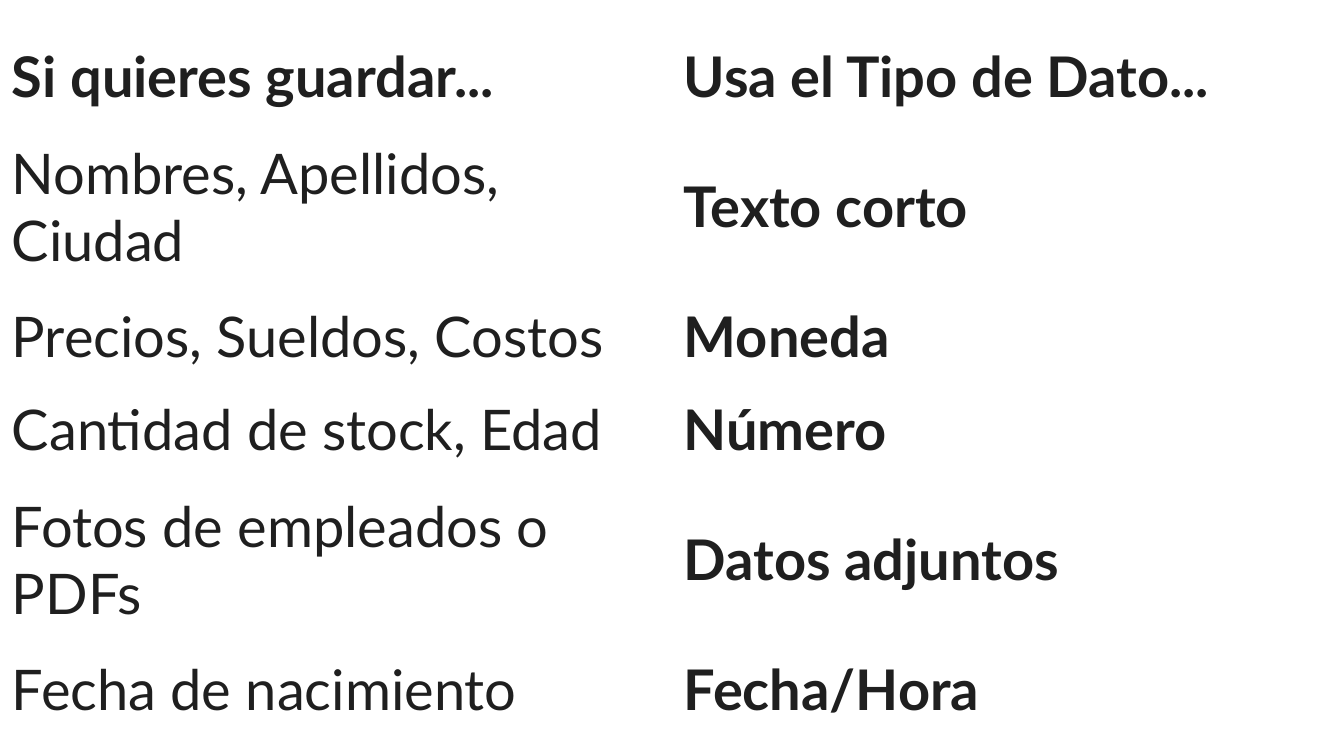
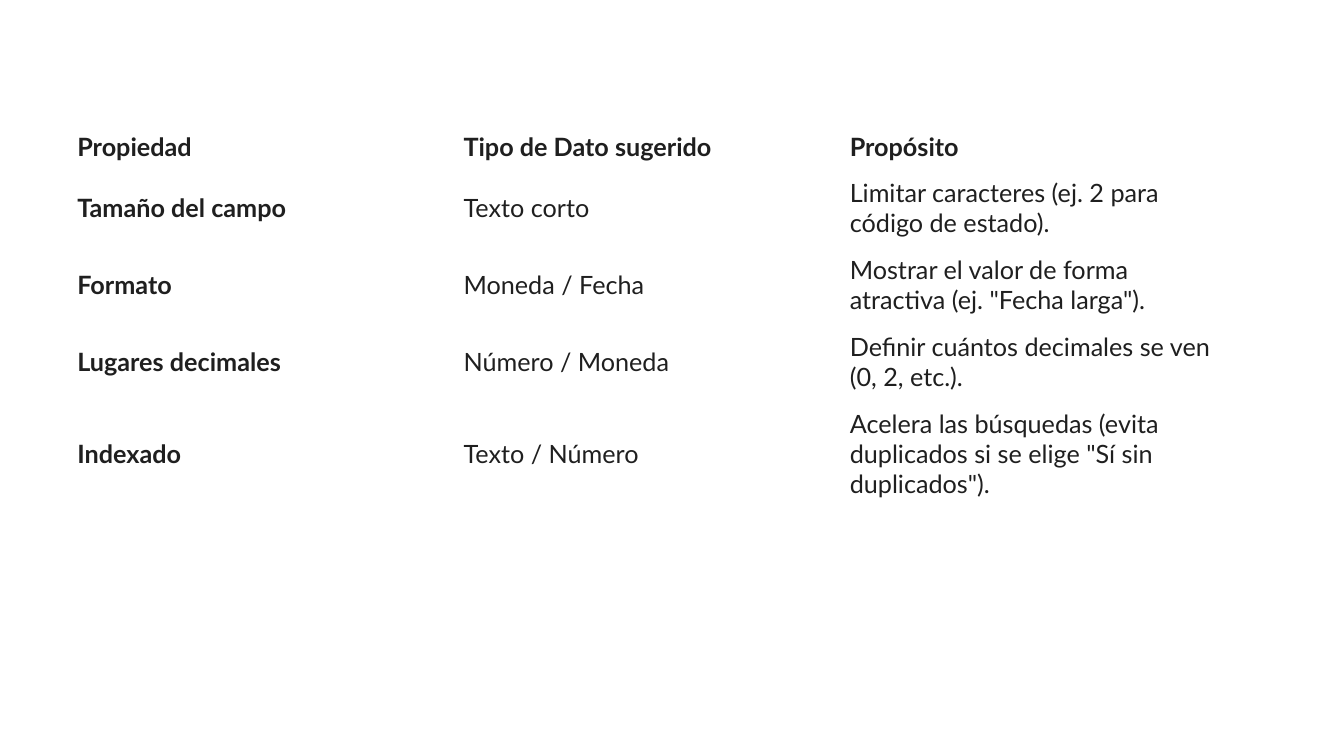
from dataclasses import dataclass

import pptx
import pptx.dml.color
import pptx.enum.text
import pptx.oxml
import pptx.oxml.ns
import pptx.util

Cm = pptx.util.Cm
Pt = pptx.util.Pt


@dataclass(frozen=True)
class Theme:
    font: str = "Lato"
    ink: str = "1F1F1F"
    paper: str = "FFFFFF"
    large: int = 40
    small: int = 18
    rule: float = 0.75
    width: float = 33.87
    height: float = 19.05
    side: float = 0.3
    edge: float = 0.2


THEME = Theme()

TYPES = [
    ("Si quieres guardar...", "Usa el Tipo de Dato..."),
    ("Nombres, Apellidos, Ciudad", "Texto corto"),
    ("Precios, Sueldos, Costos", "Moneda"),
    ("Cantidad de stock, Edad", "Número"),
    ("Fotos de empleados o PDFs", "Datos adjuntos"),
    ("Fecha de nacimiento", "Fecha/Hora"),
]

FIELDS = [
    ("Propiedad", "Tipo de Dato sugerido", "Propósito"),
    ("Tamaño del campo", "Texto corto",
     "Limitar caracteres (ej. 2 para código de estado)."),
    ("Formato", "Moneda / Fecha",
     'Mostrar el valor de forma atractiva (ej. "Fecha larga").'),
    ("Lugares decimales", "Número / Moneda",
     "Definir cuántos decimales se ven (0, 2, etc.)."),
    ("Indexado", "Texto / Número",
     'Acelera las búsquedas (evita duplicados si se elige "Sí sin duplicados").'),
]


def color(code):
    return pptx.dml.color.RGBColor.from_string(code)


def add_rules(cell):
    props = cell._tc.get_or_add_tcPr()
    for side in "LRTB":
        props.append(pptx.oxml.parse_xml(
            f'<a:ln{side} {pptx.oxml.ns.nsdecls("a")} w="{Pt(THEME.rule)}">'
            f'<a:solidFill><a:srgbClr val="{THEME.paper}"/></a:solidFill>'
            f'</a:ln{side}>'))


def style_cell(cell):
    cell.margin_left = cell.margin_right = Cm(THEME.side)
    cell.margin_top = cell.margin_bottom = Cm(THEME.edge)
    cell.vertical_anchor = pptx.enum.text.MSO_ANCHOR.MIDDLE
    add_rules(cell)
    cell.fill.solid()
    cell.fill.fore_color.rgb = color(THEME.paper)


def add_text(cell, text, size, bold):
    run = cell.text_frame.paragraphs[0].add_run()
    run.text = text
    run.font.name = THEME.font
    run.font.size = Pt(size)
    run.font.bold = bold
    run.font.color.rgb = color(THEME.ink)


def add_grid(slide, data, left, top, width, heights, size, key):
    count = len(data[0])
    frame = slide.shapes.add_table(
        len(data), count, Cm(left), Cm(top), Cm(width), Cm(sum(heights)))
    table = frame.table
    table.first_row = False
    table.horz_banding = False
    for column in table.columns:
        column.width = Cm(width / count)
    for row, (texts, height) in enumerate(zip(data, heights)):
        table.rows[row].height = Cm(height)
        for col, text in enumerate(texts):
            cell = table.cell(row, col)
            style_cell(cell)
            add_text(cell, text, size, row == 0 or col == key)


def main():
    deck = pptx.Presentation()
    deck.slide_width = Cm(THEME.width)
    deck.slide_height = Cm(THEME.height)
    blank = deck.slide_layouts[6]

    one, two = 2.34, 4.22
    add_grid(deck.slides.add_slide(blank), TYPES, 0, 0.74, THEME.width,
             [one, two, one, one, two, one], THEME.large, key=1)

    one, two, three = 1.17, 1.94, 2.7
    add_grid(deck.slides.add_slide(blank), FIELDS, 1.65, 3.1, 29.2,
             [one, two, two, two, three], THEME.small, key=0)

    deck.save("out.pptx")


if __name__ == "__main__":
    main()
